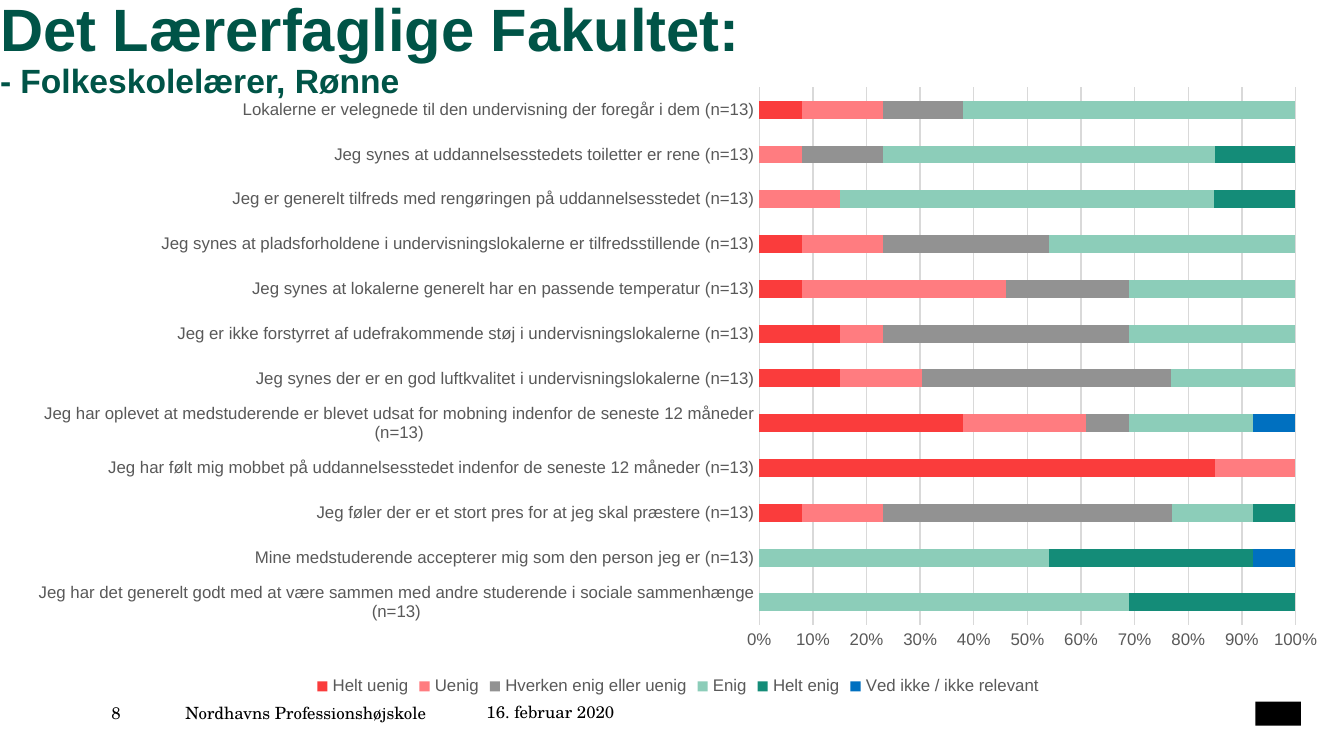
from typing import NamedTuple

from lxml.etree import fromstring
from pptx import Presentation
from pptx.chart.data import CategoryChartData
from pptx.dml.color import RGBColor
from pptx.enum.chart import XL_CHART_TYPE as ChartType
from pptx.enum.chart import XL_LEGEND_POSITION as LegendPosition
from pptx.enum.chart import XL_TICK_MARK as TickMark
from pptx.enum.shapes import MSO_SHAPE as Preset
from pptx.enum.text import MSO_ANCHOR as Anchor
from pptx.enum.text import MSO_AUTO_SIZE as AutoSize
from pptx.enum.text import PP_ALIGN as Align
from pptx.util import Inches, Pt

CHART_NS = "http://schemas.openxmlformats.org/drawingml/2006/chart"
BLACK, GREEN, TEXT_GREY, GRID_GREY = "000000", "005447", "595959", "D9D9D9"


class Box(NamedTuple):
    left: float
    top: float
    width: float
    height: float


class Footer(NamedTuple):
    text: str
    left: float
    top: float
    width: float


class Answer(NamedTuple):
    name: str
    color: str
    values: tuple


CHART_BOX = Box(0.09, 0.55, 9.91, 4.67)
PLOT_BOX = Box(5.65, 0.65, 3.99, 4)

FOOTERS = [
    Footer("8", 0.83, 5.23, 0.46),
    Footer("Nordhavns Professionshøjskole", 1.38, 5.23, 2.08),
    Footer("16. februar 2020", 3.62, 5.22, 2.8),
]

# Statements and answers run from the bottom bar to the top bar
STATEMENTS = [
    "Jeg har det generelt godt med at være sammen med andre studerende i sociale sammenhænge",
    "Mine medstuderende accepterer mig som den person jeg er",
    "Jeg føler der er et stort pres for at jeg skal præstere",
    "Jeg har følt mig mobbet på uddannelsesstedet indenfor de seneste 12 måneder",
    "Jeg har oplevet at medstuderende er blevet udsat for mobning indenfor de seneste 12 måneder",
    "Jeg synes der er en god luftkvalitet i undervisningslokalerne",
    "Jeg er ikke forstyrret af udefrakommende støj i undervisningslokalerne",
    "Jeg synes at lokalerne generelt har en passende temperatur",
    "Jeg synes at pladsforholdene i undervisningslokalerne er tilfredsstillende",
    "Jeg er generelt tilfreds med rengøringen på uddannelsesstedet",
    "Jeg synes at uddannelsesstedets toiletter er rene",
    "Lokalerne er velegnede til den undervisning der foregår i dem",
]
NO = None
ANSWERS = [
    Answer("Helt uenig", "FA3C3C", (NO, NO, 8, 85, 38, 15, 15, 8, 8, NO, NO, 8)),
    Answer("Uenig", "FF7C80", (NO, NO, 15, 15, 23, 15, 8, 38, 15, 15, 8, 15)),
    Answer("Hverken enig eller uenig", "929292", (NO, NO, 54, NO, 8, 46, 46, 23, 31, NO, 15, 15)),
    Answer("Enig", "8CCDB9", (69, 54, 15, NO, 23, 23, 31, 31, 46, 69, 62, 62)),
    Answer("Helt enig", "148C78", (31, 38, 8, NO, NO, NO, NO, NO, NO, 15, 15, NO)),
    Answer("Ved ikke / ikke relevant", "0070C0", (NO, 8, NO, NO, 8) + (NO,) * 7),
]


def rgb(color: str) -> RGBColor:
    return RGBColor.from_string(color)


def style_font(font, size: float, color: str, name: str = "Arial") -> None:
    font.name, font.size = name, Pt(size)
    font.color.rgb = rgb(color)


def style_line(line, color: str) -> None:
    line.color.rgb = rgb(color)
    line.width = Pt(0.75)


def clear_margins(frame) -> None:
    frame.margin_left = frame.margin_right = frame.margin_top = frame.margin_bottom = 0
    frame.word_wrap = True
    frame.vertical_anchor = Anchor.TOP


def draw_title(slide) -> None:
    title = slide.shapes.title
    title.left, title.top, title.width, title.height = 0, 0, Inches(8.19), Inches(1.08)
    clear_margins(title.text_frame)
    title.text_frame.auto_size = AutoSize.NONE
    paragraph = title.text_frame.paragraphs[0]
    paragraph.alignment, paragraph.line_spacing = Align.LEFT, 0.9
    style_font(paragraph.font, 32, GREEN)
    paragraph.font.bold = True
    paragraph.add_run().text = "Det Lærerfaglige Fakultet:"
    paragraph.add_line_break()
    subtitle = paragraph.add_run()
    subtitle.text = "- Folkeskolelærer, Rønne"
    subtitle.font.size = Pt(18)


def draw_footer(slide, footer: Footer) -> None:
    box = slide.shapes.add_textbox(
        Inches(footer.left), Inches(footer.top), Inches(footer.width), Inches(0.15))
    clear_margins(box.text_frame)
    paragraph = box.text_frame.paragraphs[0]
    paragraph.text = footer.text
    style_font(paragraph.font, 9, BLACK, "TeX Gyre Schola")


def place_plot(chart, outer: Box, inner: Box) -> None:
    """Fix the inner plot area, as fractions of the chart."""
    x = (inner.left - outer.left) / outer.width
    y = (inner.top - outer.top) / outer.height
    width, height = inner.width / outer.width, inner.height / outer.height
    plot_area = chart.plots[0]._element.getparent()
    for layout in plot_area.findall(f"{{{CHART_NS}}}layout"):
        plot_area.remove(layout)
    plot_area.insert(0, fromstring(
        f'<c:layout xmlns:c="{CHART_NS}"><c:manualLayout><c:layoutTarget val="inner"/>'
        f'<c:xMode val="edge"/><c:yMode val="edge"/><c:x val="{x}"/><c:y val="{y}"/>'
        f'<c:w val="{width}"/><c:h val="{height}"/></c:manualLayout></c:layout>'))


def draw_chart(slide) -> None:
    data = CategoryChartData()
    data.categories = [f"{statement} (n=13)" for statement in STATEMENTS]
    for answer in ANSWERS:
        data.add_series(answer.name, answer.values)
    chart = slide.shapes.add_chart(
        ChartType.BAR_STACKED_100, *(Inches(length) for length in CHART_BOX), data).chart
    style_font(chart.font, 10, BLACK)
    chart.has_title = False

    # Bars
    plot = chart.plots[0]
    plot.gap_width, plot.overlap, plot.vary_by_categories = 150, 100, False
    for series, answer in zip(plot.series, ANSWERS):
        series.format.fill.solid()
        series.format.fill.fore_color.rgb = rgb(answer.color)
    place_plot(chart, CHART_BOX, PLOT_BOX)

    # Axes
    for axis in (chart.category_axis, chart.value_axis):
        axis.major_tick_mark = axis.minor_tick_mark = TickMark.NONE
        style_font(axis.tick_labels.font, 9, TEXT_GREY)
    chart.category_axis.has_major_gridlines = False
    style_line(chart.category_axis.format.line, GRID_GREY)
    value_axis = chart.value_axis
    value_axis.format.line.fill.background()
    value_axis.has_major_gridlines = True
    style_line(value_axis.major_gridlines.format.line, GRID_GREY)
    value_axis.minimum_scale, value_axis.maximum_scale, value_axis.major_unit = 0, 1, 0.1
    value_axis.tick_labels.number_format = "0%"
    value_axis.tick_labels.number_format_is_linked = False

    # Legend
    chart.has_legend = True
    chart.legend.position = LegendPosition.BOTTOM
    chart.legend.include_in_layout = False
    style_font(chart.legend.font, 9, TEXT_GREY)


def draw_mark(slide) -> None:
    mark = slide.shapes.add_shape(
        Preset.RECTANGLE, Inches(9.34), Inches(5.22), Inches(0.34), Inches(0.18))
    mark.shadow.inherit = False
    mark.fill.solid()
    mark.fill.fore_color.rgb = rgb(BLACK)
    mark.line.fill.background()


def main() -> None:
    presentation = Presentation()
    # Widescreen, 16:9
    presentation.slide_width = Inches(10)
    presentation.slide_height = presentation.slide_width * 9 // 16
    slide = presentation.slides.add_slide(presentation.slide_layouts[5])
    draw_title(slide)
    for footer in FOOTERS:
        draw_footer(slide, footer)
    draw_mark(slide)
    draw_chart(slide)
    presentation.save("out.pptx")


if __name__ == "__main__":
    main()
